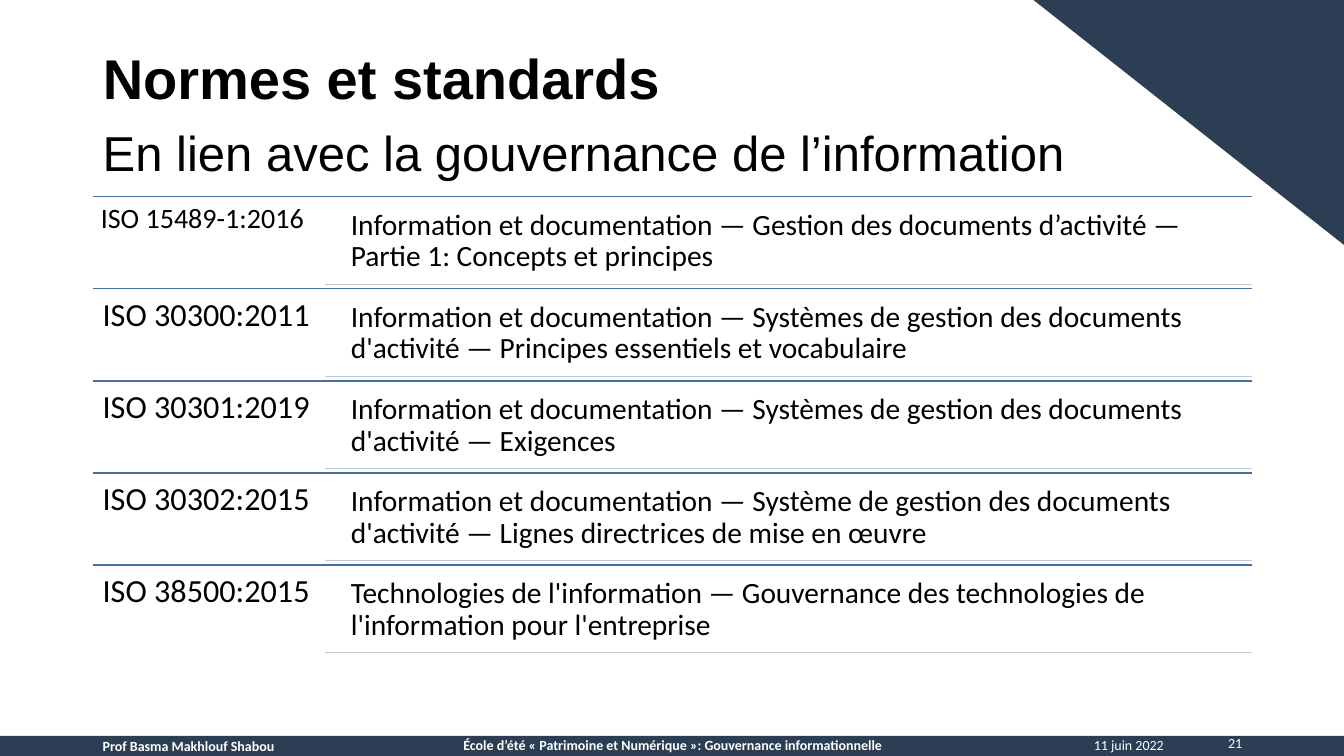
"""Build the slide listing the ISO standards linked to information governance."""
from lxml import etree
from pptx import Presentation
from pptx.dml.color import RGBColor
from pptx.enum.shapes import MSO_CONNECTOR, MSO_SHAPE
from pptx.enum.text import MSO_ANCHOR, MSO_AUTO_SIZE, PP_ALIGN
from pptx.oxml.ns import qn
from pptx.util import Inches, Pt

STRAIGHT = MSO_CONNECTOR.STRAIGHT
TRIANGLE, RECTANGLE = MSO_SHAPE.RIGHT_TRIANGLE, MSO_SHAPE.RECTANGLE
TOP, NO_FIT = MSO_ANCHOR.TOP, MSO_AUTO_SIZE.NONE
LEFT, CENTER, RIGHT, JUSTIFY = PP_ALIGN.LEFT, PP_ALIGN.CENTER, PP_ALIGN.RIGHT, PP_ALIGN.JUSTIFY

NAVY, BLUE, GREY, WHITE, BLACK = "2B3E54", "44709D", "C1C9D5", "FFFFFF", "000000"
WIDTH, HEIGHT = 13.33, 7.5
MARGIN, CONTENT_WIDTH = 0.92, 11.5
CONTENT_RIGHT = MARGIN + CONTENT_WIDTH
CODE_WIDTH, LABEL_LEFT = 2.3, 3.39
TABLE_TOP, TABLE_BOTTOM = 1.95, 6.52
LABEL_OFFSET, LABEL_HEIGHT = 0.04, 0.83

STANDARDS = [
    ("ISO 15489-1:2016", 20, 0.08,
     "Information et documentation — Gestion des documents d’activité — Partie 1: Concepts et principes"),
    ("ISO 30300:2011", 23, 0.1,
     "Information et documentation — Systèmes de gestion des documents d'activité — Principes essentiels et vocabulaire"),
    ("ISO 30301:2019", 23, 0.1,
     "Information et documentation — Systèmes de gestion des documents d'activité — Exigences"),
    ("ISO 30302:2015", 23, 0.1,
     "Information et documentation — Système de gestion des documents d'activité — Lignes directrices de mise en œuvre"),
    ("ISO 38500:2015", 23, 0.1,
     "Technologies de l'information — Gouvernance des technologies de l'information pour l'entreprise"),
]
FOOTERS = [
    ("11 juin 2022", (10.65, 7.28, 0.99, 0.22), RIGHT, False),
    ("Prof Basma Makhlouf Shabou", (MARGIN, 7.29, 3.05, 0.22), JUSTIFY, True),
    ("21", (11.88, 7.26, 0.54, 0.27), RIGHT, False),
    ("École d’été « Patrimoine et Numérique »: Gouvernance informationnelle",
     (4.47, 7.28, 4.4, 0.29), CENTER, True),
]

presentation = Presentation()
presentation.slide_width, presentation.slide_height = Inches(WIDTH), Inches(HEIGHT)
slide = presentation.slides.add_slide(presentation.slide_layouts[5])
shapes = slide.shapes


def write(text, box, size, color=BLACK, font="Calibri", bold=False, align=LEFT,
          inset=None, shape=None):
    """Put one formatted paragraph in a new text box or in the given shape."""
    shape = shape or shapes.add_textbox(0, 0, 0, 0)
    shape.left, shape.top, shape.width, shape.height = map(Inches, box)
    frame = shape.text_frame
    frame.text = text
    frame.word_wrap, frame.auto_size, frame.vertical_anchor = True, NO_FIT, TOP
    if inset:
        frame.margin_left = frame.margin_right = Inches(inset)
        frame.margin_top = frame.margin_bottom = Inches(inset)
    paragraph = frame.paragraphs[0]
    paragraph.alignment, paragraph.line_spacing = align, 0.9
    style = paragraph.runs[0].font
    style.name, style.size, style.bold = font, Pt(size), bold
    style.color.rgb = RGBColor.from_string(color)


def draw_rule(left, top, color):
    """Draw a thin horizontal line from left to the right edge of the content."""
    rule = shapes.add_connector(STRAIGHT, Inches(left), Inches(top),
                                Inches(CONTENT_RIGHT), Inches(top))
    rule.line.color.rgb = RGBColor.from_string(color)
    rule.line.width = Pt(1)
    etree.SubElement(rule._element.spPr, qn("a:effectLst"))


for preset, box, rotation in [(TRIANGLE, (10.25, 0, 3.08, 2.43), 180),
                              (RECTANGLE, (0, HEIGHT - 0.2, WIDTH, 0.2), 0)]:
    decoration = shapes.add_shape(preset, *map(Inches, box))
    decoration.rotation = rotation
    decoration.shadow.inherit = False
    decoration.fill.solid()
    decoration.fill.fore_color.rgb = RGBColor.from_string(NAVY)
    decoration.line.fill.background()

for text, box, align, bold in FOOTERS:
    write(text, box, 10, WHITE, bold=bold, align=align)

row_height = (TABLE_BOTTOM - TABLE_TOP) / len(STANDARDS)
for row, (code, size, inset, label) in enumerate(STANDARDS):
    top = TABLE_TOP + row * row_height
    label_top = top + LABEL_OFFSET
    draw_rule(MARGIN, top, BLUE)
    write(code, (MARGIN, top, CODE_WIDTH, row_height), size, inset=inset)
    write(label, (LABEL_LEFT, label_top, CONTENT_RIGHT - LABEL_LEFT, LABEL_HEIGHT), 21, inset=0.09)
    draw_rule(MARGIN + CODE_WIDTH, label_top + LABEL_HEIGHT, GREY)

write("Normes et standards", (MARGIN, 0.46, CONTENT_WIDTH, 0.71), 40,
      font="Arial", bold=True, shape=shapes.title)
write("En lien avec la gouvernance de l’information", (MARGIN, 1.23, CONTENT_WIDTH, 0.66), 35,
      font="Arial")

presentation.save("out.pptx")
